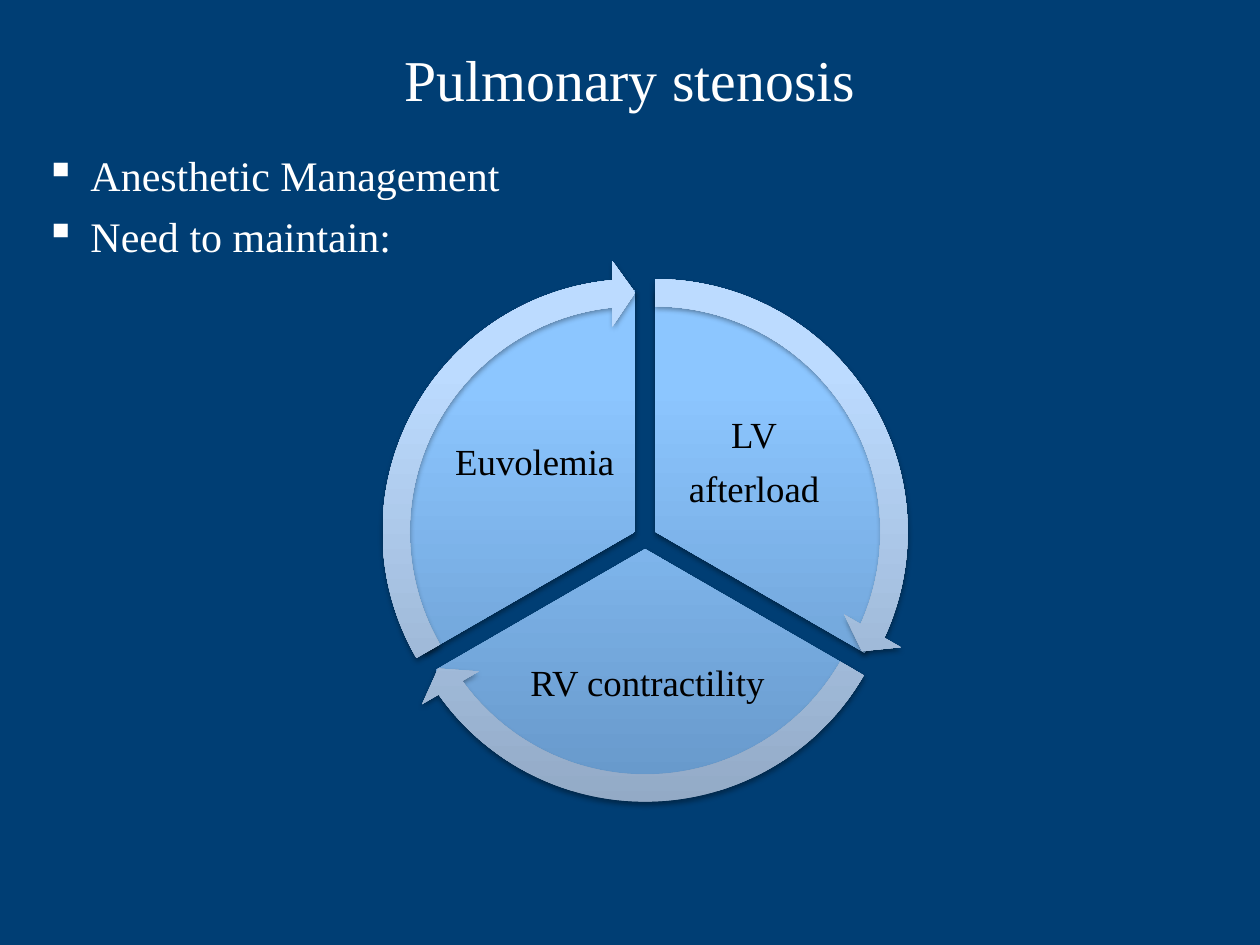
"""Build a slide on pulmonary stenosis with a three-part cycle diagram."""
import math

from pptx import Presentation
from pptx import util as u
from pptx.dml.color import RGBColor
from pptx.enum import shapes, text
from pptx.oxml import parse_xml
from pptx.oxml.ns import nsdecls

COLUMNS, ROWS = 1000, 750
CELL = u.Inches(0.01)
FONT = "Times New Roman"
NAVY = RGBColor(0x00, 0x3E, 0x74)
WHITE = RGBColor(0xFF, 0xFF, 0xFF)
BLACK = RGBColor(0x00, 0x00, 0x00)
WEDGE_STOPS = {
    0: RGBColor(0x67, 0x98, 0xCA),
    80: RGBColor(0x8C, 0xC6, 0xFF),
    100: RGBColor(0x8E, 0xC7, 0xFF),
}
ARROW_STOPS = {
    0: RGBColor(0x91, 0xA8, 0xC4),
    80: RGBColor(0xBC, 0xDB, 0xFF),
    100: RGBColor(0xBE, 0xDC, 0xFF),
}
HUB = (512, 426.6)
SPREAD = 9.2
WEDGE_SIZE, ARROW_SIZE = 384, 431
SWEEP = 120
ARROW_TIP = 5.46
ADJUSTMENT_PER_DEGREE = 0.6
SECTORS = [
    (270, ["LV", "afterload"], (530, 311, 137, 114)),
    (30, ["RV contractility"], (411, 493, 206, 100)),
    (150, ["Euvolemia"], (356, 311, 137, 114)),
]


def grid(*cells):
    """Turn counts of columns and rows into lengths."""
    return [round(count * CELL) for count in cells]


def add_bullet(paragraph, character, indent):
    """Give a paragraph a hanging bullet."""
    properties = paragraph._p.get_or_add_pPr()
    properties.set("marL", str(indent))
    properties.set("indent", str(-indent))
    properties.append(parse_xml(f'<a:buChar {nsdecls("a")} char="{character}"/>'))


def add_text(slide, lines, cells, *, size, color, align=text.PP_ALIGN.CENTER,
             anchor=text.MSO_ANCHOR.MIDDLE, margin=None, bullet=None,
             gap=0, line_spacing=1.0):
    """Add a text box with one paragraph for each line."""
    frame = slide.shapes.add_textbox(*grid(*cells)).text_frame
    frame.word_wrap = True
    frame.vertical_anchor = anchor
    if margin is not None:
        frame.margin_left = frame.margin_right = margin
        frame.margin_top = frame.margin_bottom = margin
    for index, line in enumerate(lines):
        paragraph = frame.add_paragraph() if index else frame.paragraphs[0]
        paragraph.text = line
        if bullet:
            add_bullet(paragraph, bullet, u.Inches(0.36))
        paragraph.alignment = align
        paragraph.line_spacing = line_spacing
        if index:
            paragraph.space_before = u.Pt(gap)
        paragraph.font.name = FONT
        paragraph.font.size = u.Pt(size)
        paragraph.font.color.rgb = color


def apply_gradient(shape, stops):
    """Fill a shape with a gradient that runs from bottom to top."""
    marks = "".join(
        f'<a:gs pos="{share * 1000}"><a:srgbClr val="{color}"/></a:gs>'
        for share, color in stops.items()
    )
    shape._element.spPr.prstGeom.addnext(parse_xml(
        f'<a:gradFill {nsdecls("a")} rotWithShape="1"><a:gsLst>{marks}</a:gsLst>'
        '<a:lin ang="16200000" scaled="0"/></a:gradFill>'
    ))


def apply_shadow(shape):
    """Give a shape a soft shadow below it."""
    shape.shadow.inherit = False
    shape._element.spPr.effectLst.append(parse_xml(
        f'<a:outerShdw {nsdecls("a")} blurRad="{u.Pt(3.1)}" dist="{u.Pt(1.8)}" '
        'dir="5400000" rotWithShape="0"><a:srgbClr val="000000">'
        '<a:alpha val="35000"/></a:srgbClr></a:outerShdw>'
    ))


def add_cycle_part(slide, kind, start, size, adjustments, stops):
    """Add a round part, pushed out from the hub along its middle angle."""
    middle = math.radians(start + SWEEP / 2)
    left = HUB[0] + SPREAD * math.cos(middle) - size / 2
    top = HUB[1] + SPREAD * math.sin(middle) - size / 2
    shape = slide.shapes.add_shape(kind, *grid(left, top, size, size))
    for index, value in enumerate(adjustments):
        shape.adjustments[index] = value
    apply_gradient(shape, stops)
    shape.line.fill.background()
    apply_shadow(shape)


def angle(degrees):
    """Turn degrees into an adjustment value."""
    return degrees % 360 * ADJUSTMENT_PER_DEGREE


def add_wedge(slide, start):
    """Add the wedge that begins at an angle."""
    add_cycle_part(slide, shapes.MSO_SHAPE.PIE, start, WEDGE_SIZE,
                   [angle(start), angle(start + SWEEP)], WEDGE_STOPS)


def add_arrow(slide, start):
    """Add the curved arrow around the wedge that begins at an angle."""
    end = start + SWEEP - ARROW_TIP
    add_cycle_part(slide, shapes.MSO_SHAPE.CIRCULAR_ARROW, start, ARROW_SIZE,
                   [0.05, angle(ARROW_TIP), angle(end), angle(start), 0.06],
                   ARROW_STOPS)


def main():
    """Build and save the presentation."""
    presentation = Presentation()
    presentation.slide_width, presentation.slide_height = grid(COLUMNS, ROWS)
    slide = presentation.slides.add_slide(presentation.slide_layouts[6])
    slide.background.fill.solid()
    slide.background.fill.fore_color.rgb = NAVY

    add_text(slide, ["Anesthetic Management", "Need to maintain:"],
             (26, 114, 974, 450), size=24, color=WHITE, bullet="▪", gap=6,
             align=text.PP_ALIGN.LEFT, anchor=text.MSO_ANCHOR.TOP)
    add_text(slide, ["Pulmonary stenosis"], (75, 0, 850, 125),
             size=33, color=WHITE)
    for start, lines, cells in SECTORS:
        add_wedge(slide, start)
        add_text(slide, lines, cells, size=21, color=BLACK, gap=8.5,
                 margin=u.Inches(0.03), line_spacing=0.9)
    for start, _, _ in SECTORS:
        add_arrow(slide, start)
    presentation.save("out.pptx")


if __name__ == "__main__":
    main()
